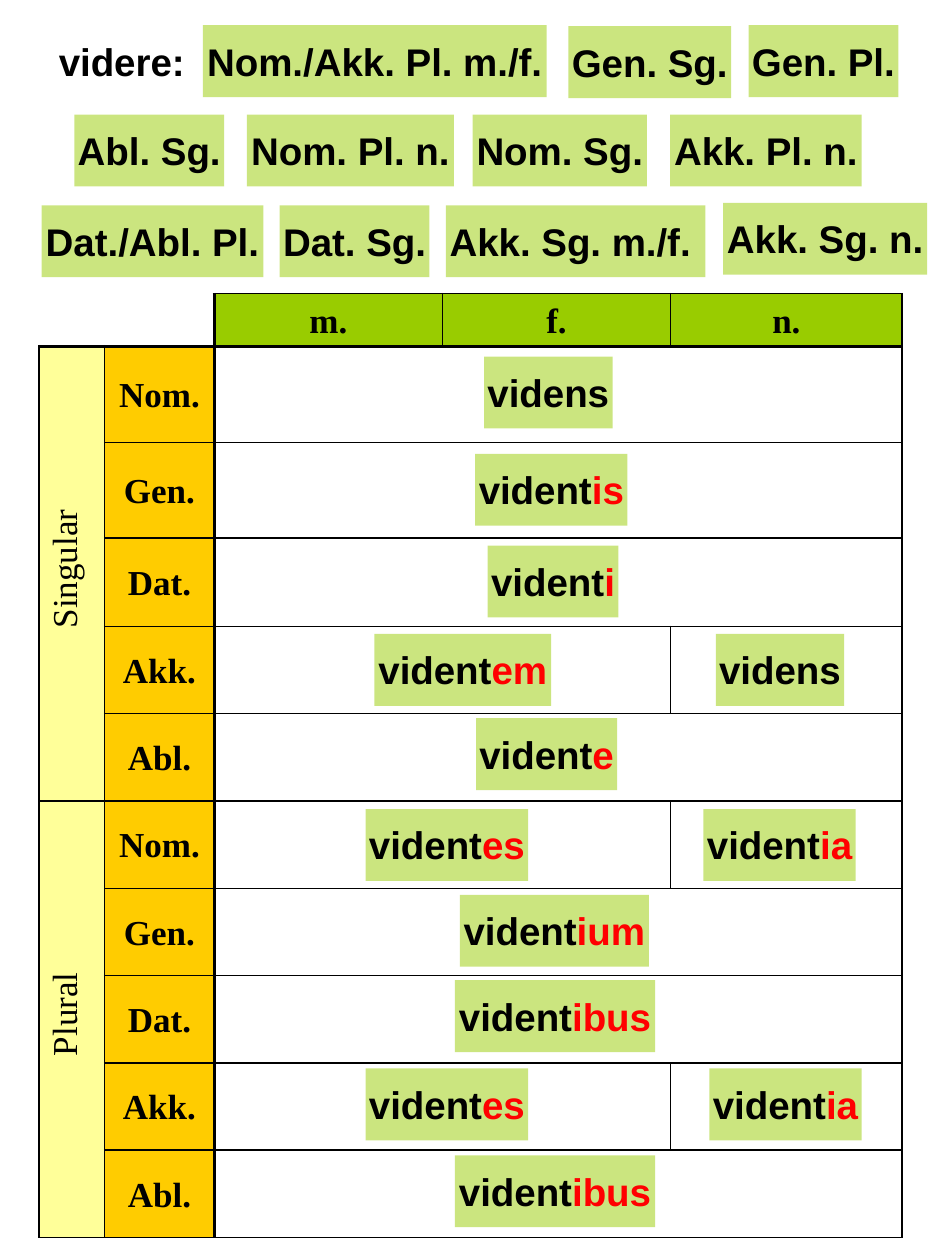
from lxml.etree import SubElement
from pptx import Presentation
from pptx.dml.color import RGBColor
from pptx.enum.shapes import MSO_SHAPE
from pptx.enum.text import MSO_ANCHOR, MSO_AUTO_SIZE, PP_ALIGN
from pptx.oxml.ns import qn
from pptx.util import Cm, Pt

LIME, GOLD, CREAM = "99CC00", "FFCC00", "FFFF99"
BLACK, RED = "000000", "FF0000"
TALL = 1.45  # height of every card
CASES = ["Nom.", "Gen.", "Dat.", "Akk.", "Abl."]
COLS = [1.32, 2.21, 4.6, 4.6, 4.67]
ROWS = [1.02, 1.93, 1.93, 1.78] + [1.76] * 7

# Case labels: left, top, width
LABELS = {
    "Nom./Akk. Pl. m./f.": (4.09, 0.51, 6.93),
    "Gen. Sg.": (11.46, 0.53, 3.28),
    "Gen. Pl.": (15.09, 0.51, 3.02),
    "Abl. Sg.": (1.5, 2.31, 3.02),
    "Nom. Pl. n.": (4.98, 2.31, 4.17),
    "Nom. Sg.": (9.53, 2.31, 3.51),
    "Akk. Pl. n.": (13.51, 2.31, 3.86),
    "Dat./Abl. Pl.": (0.84, 4.14, 4.47),
    "Dat. Sg.": (5.64, 4.14, 3.02),
    "Akk. Sg. m./f. ": (8.99, 4.14, 5.23),
    "Akk. Sg. n.": (14.58, 4.09, 4.11),
}

# Verb forms, one line per table row: top, then (form, left)
FORMS = [
    (1.27, [("videns", 8.97)]),
    (3.23, [("vident|is", 8.79)]),
    (5.08, [("vident|i", 9.04)]),
    (6.86, [("vident|em", 6.76), ("videns", 13.64)]),
    (8.56, [("vident|e", 8.81)]),
    (10.39, [("vident|es", 6.58), ("vident|ia", 13.39)]),
    (12.12, [("vident|ium", 8.48)]),
    (13.84, [("vident|ibus", 8.38)]),
    (15.62, [("vident|es", 6.58), ("vident|ia", 13.51)]),
    (17.37, [("vident|ibus", 8.38)]),
]
WIDTHS = {"videns": 2.59, "vident|is": 3.07, "vident|i": 2.64,
          "vident|em": 3.56, "vident|e": 2.84, "vident|es": 3.28,
          "vident|ia": 3.07, "vident|ium": 3.81, "vident|ibus": 4.04}


def rgb(code):
    return RGBColor.from_string(code)


def write(frame, text, size=22, font="Arial", bold=True, space=None):
    """Fill a frame with centred text; what follows "|" is red."""
    para = frame.paragraphs[0]
    para.alignment = PP_ALIGN.CENTER
    para.line_spacing = space
    for part, color in zip(text.split("|"), (BLACK, RED)):
        run = para.add_run()
        run.text = part
        run.font.size, run.font.name, run.font.bold = Pt(size), font, bold
        run.font.color.rgb = rgb(color)


def fit(frame):
    frame.margin_left = frame.margin_right = Cm(0.05)
    frame.margin_top = frame.margin_bottom = Cm(0.25)
    frame.vertical_anchor = MSO_ANCHOR.TOP
    frame.word_wrap = False
    frame.auto_size = MSO_AUTO_SIZE.SHAPE_TO_FIT_TEXT


def card(slide, text, left, top, width):
    box = slide.shapes.add_shape(MSO_SHAPE.RECTANGLE, Cm(left), Cm(top),
                                 Cm(width), Cm(TALL))
    box.shadow.inherit = False
    box.fill.solid()
    box.fill.fore_color.rgb = rgb(LIME)
    tint = next(box.element.iter(qn("a:srgbClr")))
    SubElement(tint, qn("a:alpha"), val="50000")
    box.line.fill.background()
    fit(box.text_frame)
    write(box.text_frame, text)


def title(slide, left, top, width):
    head = slide.shapes.title
    head.left, head.top = Cm(left), Cm(top)
    head.width, head.height = Cm(width), Cm(TALL)
    fit(head.text_frame)
    write(head.text_frame, "videre:")


def labels(slide, left, top):
    for text, (x, y, width) in LABELS.items():
        card(slide, text, left + x, top + y, width)


def forms(slide, left, top):
    for y, items in FORMS:
        for text, x in items:
            card(slide, text, left + x, top + y, WIDTHS[text])


def edge(props, side, width):
    line = SubElement(props, qn("a:ln" + side), w=str(Pt(width)))
    if width:
        fill = SubElement(line, qn("a:solidFill"))
        SubElement(fill, qn("a:srgbClr"), val=BLACK)
    else:
        SubElement(line, qn("a:noFill"))


def frame_cell(cell, row, col):
    """Rule a cell: heavy lines divide heads from body."""
    props = cell._tc.get_or_add_tcPr()
    blank = row == 0 and col < 2
    right, base = col + cell.span_width, row + cell.span_height
    edge(props, "L", 0 if blank else 2.25 if col == 2 else 1)
    edge(props, "R", 2.25 if right == 2 else 1)
    edge(props, "T", 0 if blank else 2.25 if row == 1 else 1)
    edge(props, "B", 2.25 if base == 1 else 1)
    cell.fill.background()


def head_cell(cell, text, color, bold=True):
    cell.fill.solid()
    cell.fill.fore_color.rgb = rgb(color)
    cell.vertical_anchor = MSO_ANCHOR.MIDDLE
    cell.margin_left = cell.margin_right = Cm(0.15)
    cell.margin_top = cell.margin_bottom = Cm(0.08)
    write(cell.text_frame, text, size=20, font="Times New Roman",
          bold=bold, space=1.07)


def grid(slide, left, top):
    table = slide.shapes.add_table(len(ROWS), len(COLS), Cm(left), Cm(top),
                                   Cm(sum(COLS)), Cm(sum(ROWS))).table
    table.first_row = table.horz_banding = False
    for col, width in zip(table.columns, COLS):
        col.width = Cm(width)
    for row, height in zip(table.rows, ROWS):
        row.height = Cm(height)

    # Merged cells
    table.cell(0, 0).merge(table.cell(0, 1))
    for row, (_, items) in enumerate(FORMS, 1):
        table.cell(row, 2).merge(table.cell(row, 5 - len(items)))
    for row in (1, 6):
        table.cell(row, 0).merge(table.cell(row + 4, 0))

    # Rules
    for row in range(len(ROWS)):
        for col in range(len(COLS)):
            frame_cell(table.cell(row, col), row, col)

    # Heads
    for col, text in enumerate(["m.", "f.", "n."], 2):
        head_cell(table.cell(0, col), text, LIME)
    for row, text in enumerate(CASES * 2, 1):
        head_cell(table.cell(row, 1), text, GOLD)
    for row, text in ((1, "Singular"), (6, "Plural")):
        cell = table.cell(row, 0)
        head_cell(cell, text, CREAM, bold=False)
        cell._tc.get_or_add_tcPr().set("vert", "vert270")
        para = cell.text_frame.paragraphs[0]
        para._p.get_or_add_pPr().set("marL", str(Cm(0.2)))


def main():
    deck = Presentation()
    deck.slide_width, deck.slide_height = Cm(19.05), Cm(25.4)
    slide = deck.slides.add_slide(deck.slide_layouts[5])
    title(slide, 1.12, 0.51, 2.67)
    labels(slide, 0, 0)
    grid(slide, 0.79, 5.92)
    forms(slide, 0.79, 5.92)
    deck.save("out.pptx")


if __name__ == "__main__":
    main()
